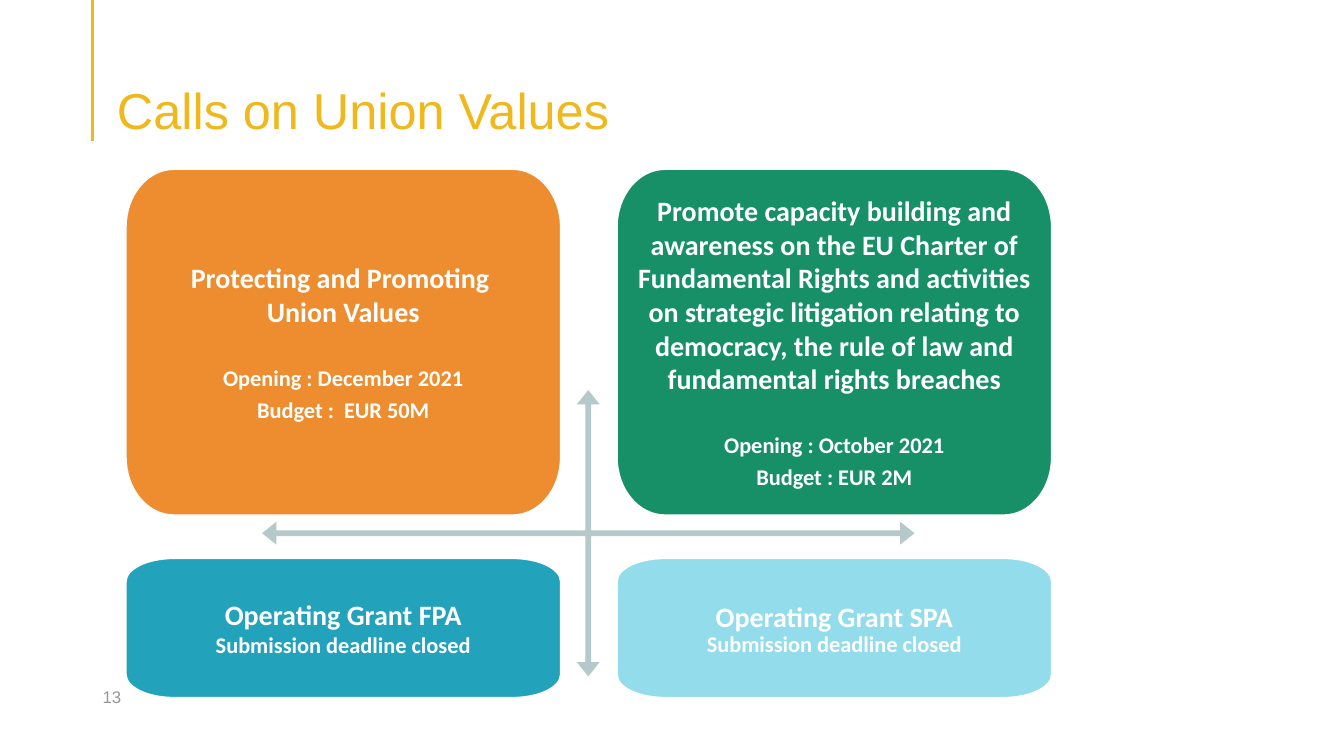
from pptx import Presentation
from pptx.dml.color import RGBColor
from pptx.enum.shapes import MSO_CONNECTOR, MSO_SHAPE
from pptx.enum.text import MSO_ANCHOR, PP_ALIGN
from pptx.oxml.ns import qn
from pptx.util import Inches, Pt
from lxml.etree import SubElement

COLOURS = {
    "gold": "EFB81D",
    "grey": "979797",
    "arrow": "B5C8CA",
    "orange": "ED8D2F",
    "green": "179068",
    "teal": "23A2BC",
    "sky": "93DCEB",
    "white": "FFFFFF",
}

# Grid of the four call cards: two columns, two rows (top, height)
FIRST_COLUMN, COLUMN_STEP, CARD_WIDTH = 1.25, 4.87, 4.31
ROWS = [(1.68, 3.43), (5.54, 1.38)]
CORNER_ACROSS, CORNER_DOWN = 0.11, 1 / 6
CURVE_PULL = 0.55
MARGIN = 0.92

# Paragraph styles: size, line spacing, space after
HEADING = (20, 1.0, 0)
HEADING_END = (20, 1.0, 28)
DETAIL = (16, 0.9, 5.6)
STATUS = (16, 1.0, 0)
STATUS_TIGHT = (16, 0.9, 0)

# Column, row, colour, paragraphs
CARDS = [
    (0, 0, "orange", [
        ("Protecting and Promoting ", HEADING),
        ("Union Values", HEADING_END),
        ("Opening : December 2021", DETAIL),
        ("Budget :  EUR 50M", DETAIL),
    ]),
    (0, 1, "teal", [
        ("Operating Grant FPA", HEADING),
        ("Submission deadline closed", STATUS),
    ]),
    (1, 0, "green", [
        ("Promote capacity building and awareness on the EU Charter of "
         "Fundamental Rights and activities on strategic litigation relating "
         "to democracy, the rule of law and fundamental rights breaches",
         HEADING_END),
        ("Opening : October 2021", DETAIL),
        ("Budget : EUR 2M", DETAIL),
    ]),
    (1, 1, "sky", [
        ("Operating Grant SPA", HEADING),
        ("Submission deadline closed", STATUS_TIGHT),
    ]),
]


def colour(name):
    return RGBColor.from_string(COLOURS[name])


def add_span(para, text, size, font, colour_name, bold=False):
    span = para.add_run()
    span.text = text
    span.font.size = Pt(size)
    span.font.name = font
    span.font.bold = bold
    span.font.color.rgb = colour(colour_name)


def set_frame(frame, anchor, left, top, right, bottom):
    frame.word_wrap = True
    frame.vertical_anchor = anchor
    frame.margin_left, frame.margin_top = Inches(left), Inches(top)
    frame.margin_right, frame.margin_bottom = Inches(right), Inches(bottom)


def add_title(page, text):
    title = page.shapes.title
    title.left, title.top = Inches(1.06), Inches(0.53)
    title.width, title.height = Inches(11.5), Inches(0.86)
    set_frame(title.text_frame, MSO_ANCHOR.BOTTOM, 0.1, 0.05, 0.1, 0)
    para = title.text_frame.paragraphs[0]
    para.alignment = PP_ALIGN.LEFT
    para.line_spacing = 0.9
    add_span(para, text, 36, "Arial", "gold")


def add_margin_line(page):
    line = page.shapes.add_connector(
        MSO_CONNECTOR.STRAIGHT, Inches(MARGIN), 0, Inches(MARGIN), Inches(1.4))
    line.line.color.rgb = colour("gold")
    line.line.width = Pt(2.25)
    SubElement(line._element.spPr, qn("a:effectLst"))


def add_page_number(page, number):
    box = page.shapes.add_textbox(
        Inches(MARGIN), Inches(6.71), Inches(3), Inches(0.4))
    set_frame(box.text_frame, MSO_ANCHOR.MIDDLE, 0.1, 0.05, 0.1, 0.05)
    add_span(box.text_frame.paragraphs[0], number, 12, "Arial", "grey")


def add_cross_arrow(page):
    arrow = page.shapes.add_shape(
        MSO_SHAPE.QUAD_ARROW, Inches(2.6), Inches(3.87), Inches(6.47), Inches(2.84))
    for index, share in enumerate((0.02, 0.04, 0.05)):
        arrow.adjustments[index] = share
    arrow.shadow.inherit = False
    arrow.fill.solid()
    arrow.fill.fore_color.rgb = colour("arrow")
    arrow.line.fill.background()


def round_corners(card):
    """Turn the four slanted sides of the outline into curves."""
    width, height = card.width, card.height
    corners = [(0, 0), (width, 0), (width, height), (0, height)]
    outline = card._element.spPr.find(".//" + qn("a:path"))
    ends = [(int(point.get("x")), int(point.get("y")))
            for point in outline.iter(qn("a:pt"))]
    slants = outline.findall(qn("a:lnTo"))[::2]
    for slant, corner, start, end in zip(slants, corners, ends[::2], ends[1::2]):
        slant_curve = SubElement(outline, qn("a:cubicBezTo"))
        pulled = [tuple(round(at + CURVE_PULL * (to - at))
                        for at, to in zip(spot, corner))
                  for spot in (start, end)]
        for across, down in (*pulled, end):
            SubElement(slant_curve, qn("a:pt"), x=str(across), y=str(down))
        outline.replace(slant, slant_curve)


def add_rounded_panel(page, left, top, width, height):
    across, down = width * CORNER_ACROSS, height * CORNER_DOWN
    right, bottom = left + width, top + height
    points = [
        (left, top + down), (left + across, top),
        (right - across, top), (right, top + down),
        (right, bottom - down), (right - across, bottom),
        (left + across, bottom), (left, bottom - down),
    ]
    points = [(Inches(across), Inches(down)) for across, down in points]
    builder = page.shapes.build_freeform(*points[0], scale=1.0)
    builder.add_line_segments(points[1:], close=True)
    panel = builder.convert_to_shape()
    round_corners(panel)
    return panel


def add_card(page, column, row, colour_name, paragraphs):
    top, height = ROWS[row]
    left = FIRST_COLUMN + column * COLUMN_STEP
    card = add_rounded_panel(page, left, top, CARD_WIDTH, height)
    card.shadow.inherit = False
    card.fill.solid()
    card.fill.fore_color.rgb = colour(colour_name)
    card.line.color.rgb = colour("white")
    card.line.width = Pt(1)

    frame = card.text_frame
    set_frame(frame, MSO_ANCHOR.MIDDLE, 0.16, 0.16, 0.16, 0.16)
    for index, (text, (size, spacing, after)) in enumerate(paragraphs):
        para = frame.add_paragraph() if index else frame.paragraphs[0]
        para.alignment = PP_ALIGN.CENTER
        para.line_spacing = spacing
        para.space_after = Pt(after)
        add_span(para, text, size, "Calibri", "white", bold=True)


def main():
    deck = Presentation()
    deck.slide_width, deck.slide_height = Inches(13.33), Inches(7.5)
    page = deck.slides.add_slide(deck.slide_layouts.get_by_name("Title Only"))

    # Header and page number
    add_margin_line(page)
    add_page_number(page, "13")
    add_title(page, "Calls on Union Values")

    # Calls around the crossing arrows
    add_cross_arrow(page)
    for card in CARDS:
        add_card(page, *card)

    deck.save("out.pptx")


if __name__ == "__main__":
    main()
